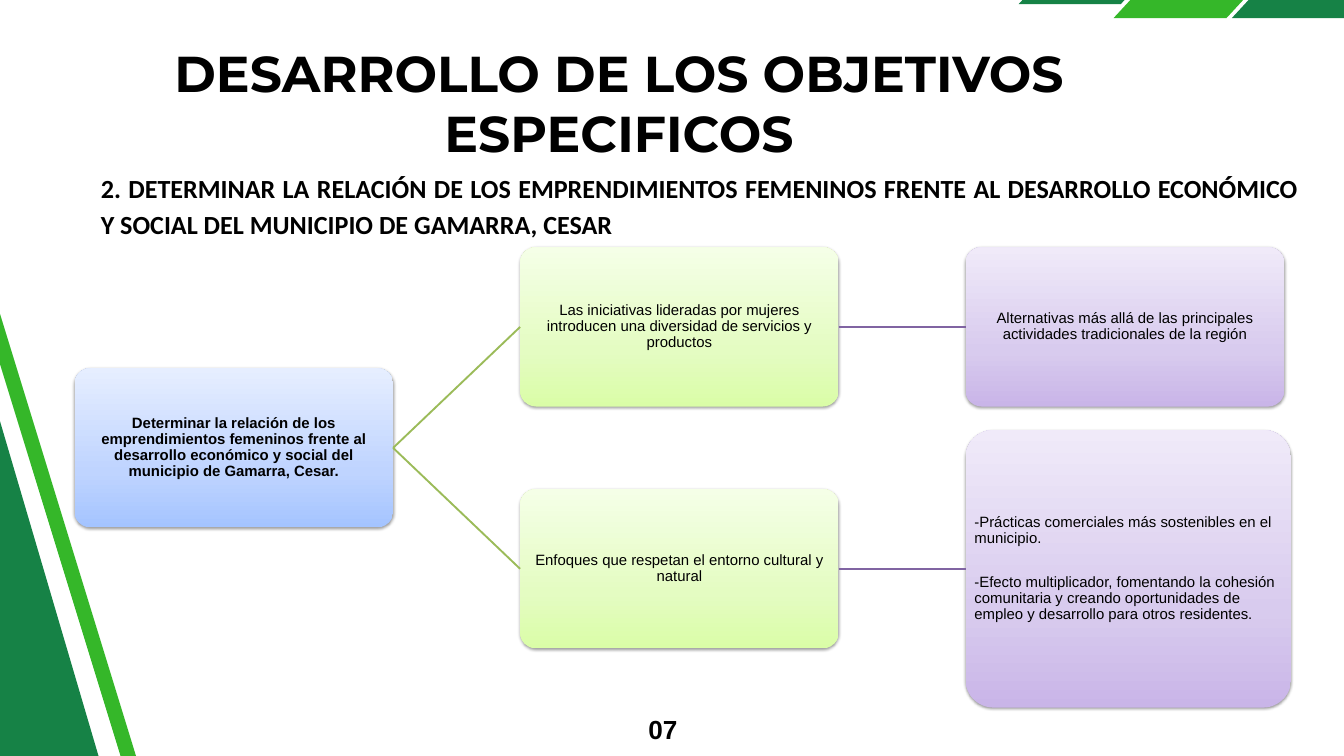
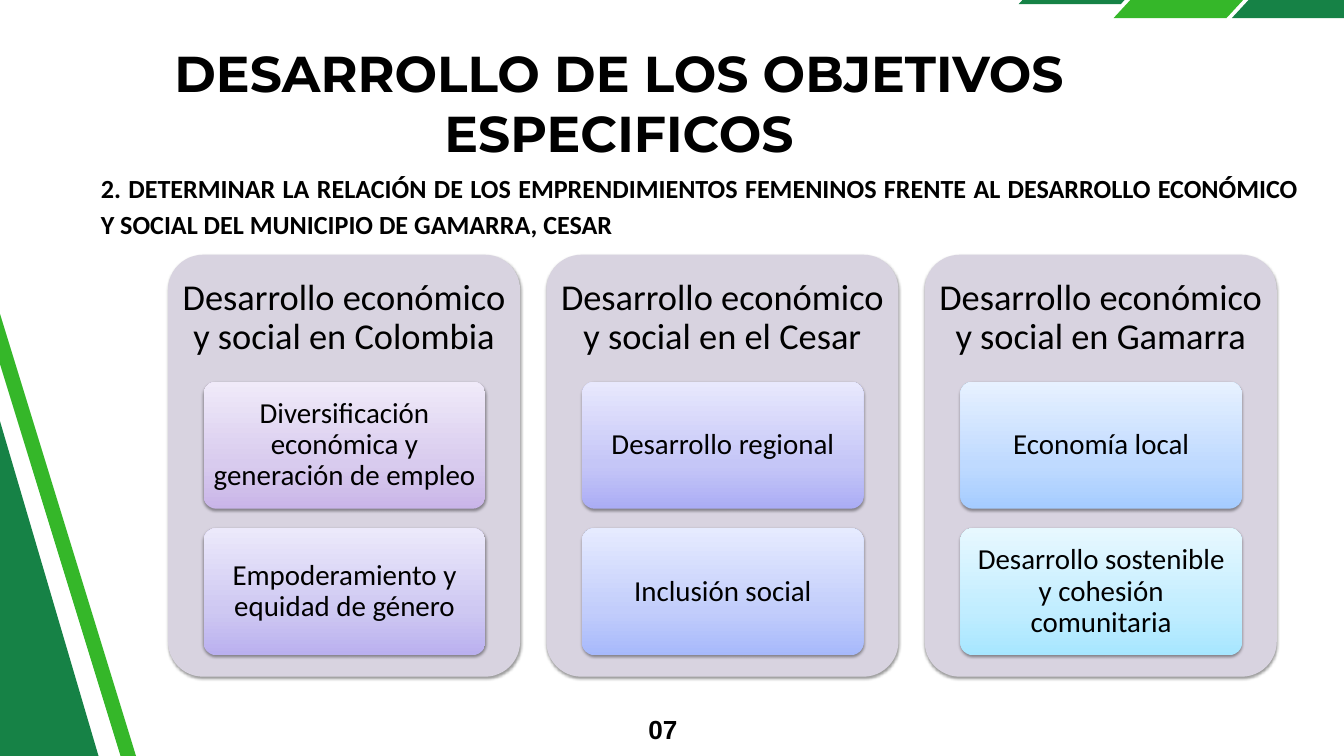
"""Build two slides on the second specific objective: a tree and three panels."""
import dataclasses

import lxml.etree
import pptx
import pptx.dml.color
import pptx.enum.shapes
import pptx.enum.text
import pptx.oxml.ns
import pptx.util

SCALE = 9144
ALIGN = pptx.enum.text.PP_ALIGN
ANCHOR = pptx.enum.text.MSO_ANCHOR
SHAPE = pptx.enum.shapes.MSO_SHAPE
LINK = pptx.enum.shapes.MSO_CONNECTOR.STRAIGHT
qn = pptx.oxml.ns.qn


@dataclasses.dataclass(frozen=True)
class Theme:
    """Colours, fonts and type sizes; tones run from dark to light."""
    ink: str = "000000"
    pine: str = "168246"
    leaf: str = "35B729"
    panel: str = "D8D3E0"
    olive: str = "9BBB59"
    plum: str = "8064A2"
    blue: tuple = ("A4C4FF", "BFD4FF", "E6EEFF")
    lime: tuple = ("DAFDA7", "E4FCC2", "F5FFE7")
    mauve: tuple = ("C9B5E8", "D8CBEE", "F0EAF9")
    violet: tuple = ("BAB0EF", "CEC8F2", "ECE9FB")
    iris: tuple = ("ABADF5", "C5C6F7", "E8E8FD")
    azure: tuple = ("A7B9FB", "C2CDFB", "E6EBFF")
    sky: tuple = ("A5CCFF", "BFDAFF", "E7F1FF")
    cyan: tuple = ("A7E6FF", "C1EDFF", "E7F8FF")
    title: tuple = ("Montserrat", 54)
    goal: tuple = ("Calibri", 28)
    page: tuple = ("Arial", 28)
    node: tuple = ("Arial", 16)
    head: tuple = ("Calibri", 39)
    item: tuple = ("Calibri", 31)


THEME = Theme()


def px(*sizes):
    """Turn px into EMU."""
    return [pptx.util.Emu(size * SCALE) for size in sizes]


def rgb(code):
    """Turn a hex code into a colour."""
    return pptx.dml.color.RGBColor.from_string(code)


def write(shape, lines, style, align=ALIGN.CENTER, bold=False, pad=(0, 0, 0, 0),
          anchor=ANCHOR.TOP, lead=None, gap=0):
    """Fill a shape with one styled paragraph per line."""
    frame = shape.text_frame
    frame.word_wrap = True
    frame.vertical_anchor = anchor
    (frame.margin_left, frame.margin_top,
     frame.margin_right, frame.margin_bottom) = px(*pad)
    for rank, line in enumerate(lines):
        para = frame.add_paragraph() if rank else frame.paragraphs[0]
        para.alignment = align
        if lead:
            para.line_spacing = lead
        if rank:
            para.space_before = pptx.util.Pt(gap)
        run = para.add_run()
        run.text = line
        run.font.name = style[0]
        run.font.size = pptx.util.Pt(style[1])
        run.font.bold = bold
        run.font.color.rgb = rgb(THEME.ink)


def label(slide, area, line, style, **look):
    """Add a text box with one paragraph."""
    write(slide.shapes.add_textbox(*px(*area)), [line], style, **look)


def shade(shape, tones):
    """Fill a shape with three tones from the bottom up."""
    shape.fill.gradient()
    shape.fill.gradient_angle = 90
    stops = shape.fill._xPr.find(".//" + qn("a:gsLst"))
    for stop in list(stops):
        stops.remove(stop)
    for spot, tone in zip((0, 35, 100), tones):
        stop = lxml.etree.SubElement(stops, qn("a:gs"), pos=str(spot * 1000))
        lxml.etree.SubElement(stop, qn("a:srgbClr"), val=tone)


def drop(shape):
    """Give a shape a soft shadow below it."""
    shape.shadow.inherit = False
    fx = shape._element.spPr.find(qn("a:effectLst"))
    soft = lxml.etree.SubElement(fx, qn("a:outerShdw"), blurRad="40000", dist="20000",
                                 dir="5400000", rotWithShape="0")
    tint = lxml.etree.SubElement(soft, qn("a:srgbClr"), val=THEME.ink)
    lxml.etree.SubElement(tint, qn("a:alpha"), val="38000")


def card(slide, area, fill):
    """Add a rounded box with a plain or shaded fill."""
    shape = slide.shapes.add_shape(SHAPE.ROUNDED_RECTANGLE, *px(*area))
    shape.adjustments[0] = 0.1
    if isinstance(fill, str):
        shape.fill.solid()
        shape.fill.fore_color.rgb = rgb(fill)
    else:
        shade(shape, fill)
    shape.line.fill.background()
    drop(shape)
    return shape


def node(slide, area, tones, *lines, **look):
    """Add a box of the tree."""
    shape = card(slide, area, tones)
    write(shape, lines, THEME.node, pad=(1, 1, 1, 1), anchor=ANCHOR.MIDDLE,
          lead=0.9, gap=30, **look)
    return shape


def join(slide, start, end, color):
    """Link the right side of one box to the left side of another."""
    line = slide.shapes.add_connector(LINK, 0, 0, 0, 0)
    line.begin_connect(start, 3)
    line.end_connect(end, 1)
    line.line.color.rgb = rgb(color)
    line.line.width = pptx.util.Pt(2)
    lxml.etree.SubElement(line._element.spPr, qn("a:effectLst"))


def band(slide, points, color, turn=0):
    """Add a flat band through the given points."""
    pen = slide.shapes.build_freeform(*points[0], scale=SCALE)
    pen.add_line_segments(points[1:], close=True)
    shape = pen.convert_to_shape()
    shape.rotation = turn
    shape.fill.solid()
    shape.fill.fore_color.rgb = rgb(color)
    shape.line.fill.background()
    shape.shadow.inherit = False


def slant(slide, left, top, width, height, skew, color):
    """Add a leaning band at the top edge."""
    right, low = left + width, top + height
    band(slide, [(left + skew, top), (right, top), (right - skew, low), (left, low)], color)


def slab(slide, left, top, width, height, turn, color):
    """Add a turned band at the left edge."""
    right, low = left + width, top + height
    band(slide, [(left, top), (right, top), (right, low), (left, low)], color, turn)


def base(deck):
    """Add a slide with the bands, title, goal and page number."""
    slide = deck.slides.add_slide(deck.slide_layouts[6])
    slant(slide, 1516, -86, 237, 92, 85, THEME.pine)
    slant(slide, 1657, -106, 291, 133, 123, THEME.leaf)
    slant(slide, 1833, -106, 291, 133, 123, THEME.pine)
    slab(slide, -1009, 623, 1641, 501, 253.6, THEME.pine)
    slab(slide, -708, 859, 1641, 22, 252.9, THEME.leaf)
    label(slide, (225, 62, 1392, 182), "DESARROLLO DE LOS OBJETIVOS ESPECIFICOS",
          THEME.title, bold=True)
    label(slide, (952, 1054, 56, 50), "07", THEME.page, align=ALIGN.RIGHT, bold=True,
          lead=pptx.util.Pt(39.2))
    label(slide, (90, 244, 1851, 115),
          "2. DETERMINAR LA RELACIÓN DE LOS EMPRENDIMIENTOS FEMENINOS FRENTE AL "
          "DESARROLLO ECONÓMICO Y SOCIAL DEL MUNICIPIO DE GAMARRA, CESAR",
          THEME.goal, align=ALIGN.JUSTIFY, bold=True, pad=(60, 5, 10, 5), lead=1.15)
    return slide


def tree(slide):
    """Draw the goal, its two branches and their effects."""
    wide, high, step = 474, 237, 663
    near, mid, far = (111 + step * rank for rank in range(3))
    root = node(slide, (near, 548, wide, high), THEME.blue,
                "Determinar la relación de los emprendimientos femeninos frente al "
                "desarrollo económico y social del municipio de Gamarra, Cesar.", bold=True)
    range_box = node(slide, (mid, 368, wide, high), THEME.lime,
                     "Las iniciativas lideradas por mujeres introducen una diversidad "
                     "de servicios y productos")
    other = node(slide, (far, 368, wide, high), THEME.mauve,
                 "Alternativas más allá de las principales actividades tradicionales "
                 "de la región")
    focus = node(slide, (mid, 728, wide, high), THEME.lime,
                 "Enfoques que respetan el entorno cultural y natural")
    gains = node(slide, (far, 640, 484, 413), THEME.mauve,
                 "-Prácticas comerciales más sostenibles en el municipio.",
                 "-Efecto multiplicador, fomentando la cohesión comunitaria y creando "
                 "oportunidades de empleo y desarrollo para otros residentes.",
                 align=ALIGN.LEFT)
    for start, end, color in ((root, range_box, THEME.olive), (root, focus, THEME.olive),
                              (range_box, other, THEME.plum), (focus, gains, THEME.plum)):
        join(slide, start, end, color)


def panel(slide, left, place, items):
    """Draw one panel with its heading and stacked items."""
    top, wide = 379, 524
    card(slide, (left, top, wide, 628), THEME.panel)
    label(slide, (left, top, wide, 188), "Desarrollo económico y social en " + place,
          THEME.head, pad=(16, 16, 16, 16), anchor=ANCHOR.MIDDLE, lead=0.9)
    for rank, (line, tones) in enumerate(items):
        shape = card(slide, (left + 53, 568 + 218 * rank, 419, 189), tones)
        write(shape, [line], THEME.item, pad=(9, 6, 9, 6), anchor=ANCHOR.MIDDLE, lead=0.9)


def main():
    """Build and save the deck."""
    deck = pptx.Presentation()
    deck.slide_width, deck.slide_height = px(2000, 1125)
    tree(base(deck))
    slide = base(deck)
    panels = (
        ("Colombia", (("Diversificación económica y generación de empleo", THEME.mauve),
                      ("Empoderamiento y equidad de género", THEME.violet))),
        ("el Cesar", (("Desarrollo regional", THEME.iris),
                      ("Inclusión social", THEME.azure))),
        ("Gamarra", (("Economía local", THEME.sky),
                     ("Desarrollo sostenible y cohesión comunitaria", THEME.cyan))),
    )
    for rank, (place, items) in enumerate(panels):
        panel(slide, 250 + 563 * rank, place, items)
    deck.save("out.pptx")


if __name__ == "__main__":
    main()
